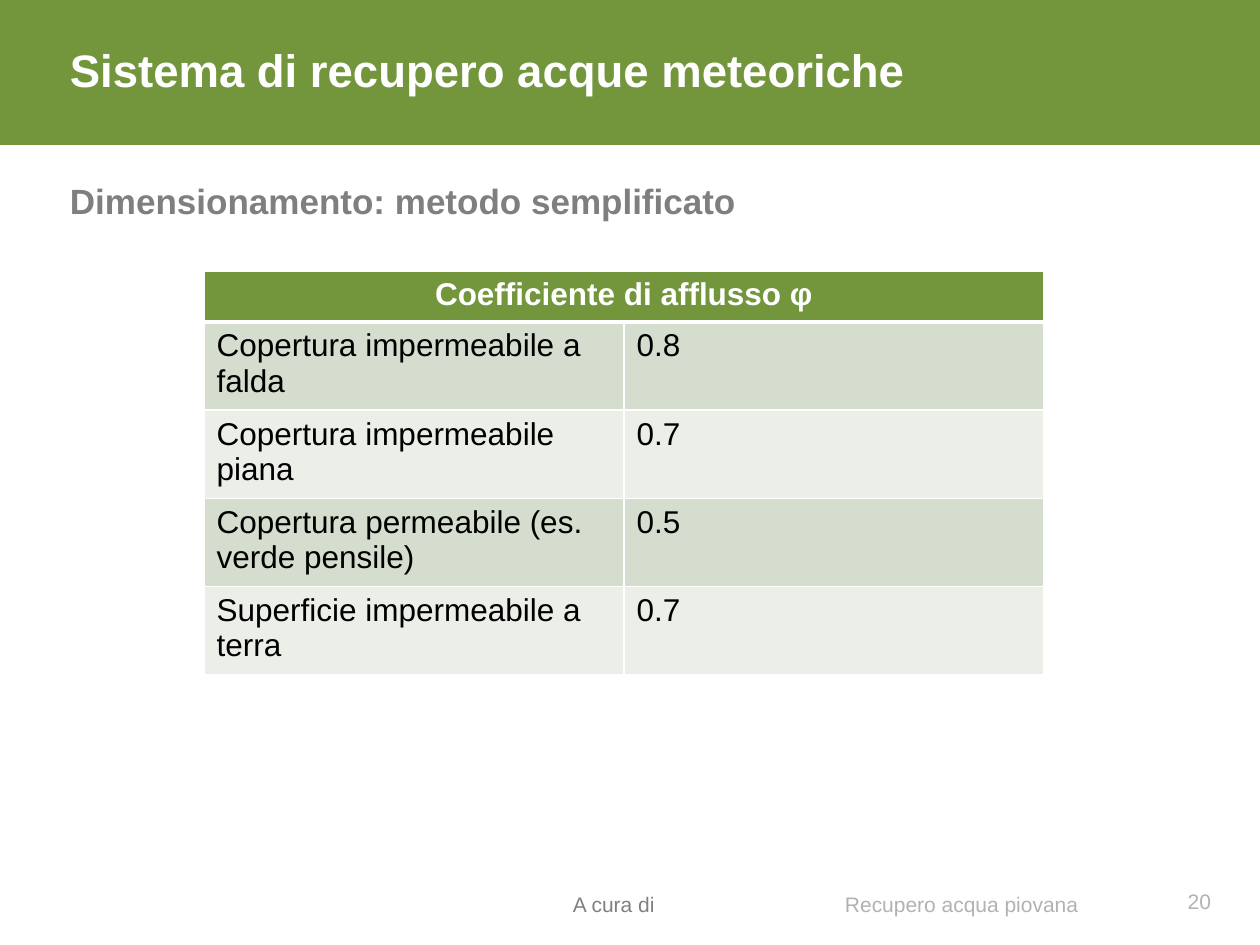
from pptx import Presentation
from pptx.dml.color import RGBColor as RGB
from pptx.enum.shapes import MSO_SHAPE as SHAPE
from pptx.enum.text import MSO_ANCHOR as ANCHOR, PP_ALIGN as ALIGN
from pptx.oxml.ns import qn
from pptx.util import Emu, Pt
from lxml.etree import SubElement

GREEN = RGB(0x73, 0x96, 0x3D)
DARK = RGB(0xD5, 0xDD, 0xCE)
PALE = RGB(0xEB, 0xEF, 0xE8)
WHITE = RGB(255, 255, 255)
BLACK = RGB(0, 0, 0)
GRAY = RGB(0x80, 0x80, 0x80)
MID = RGB(0x7F, 0x7F, 0x7F)
LIGHT = RGB(0xB2, 0xB2, 0xB2)

HEAD = "Coefficiente di afflusso φ"
ROWS = [
    ("Copertura impermeabile a falda", "0.8"),
    ("Copertura impermeabile piana", "0.7"),
    ("Copertura permeabile (es. verde pensile)", "0.5"),
    ("Superficie impermeabile a terra", "0.7"),
]


def px(n):
    return Emu(round(n * 914400 / 126))


def write(frame, text, size, color, bold=False, align=ALIGN.LEFT):
    para = frame.paragraphs[0]
    para.text = text
    para.alignment = align
    font = para.font
    font.name, font.size, font.bold = "Arial", Pt(size), bold
    font.color.rgb = color


def add_text(slide, box, text, size, color, bold=False, align=ALIGN.LEFT,
             anchor=ANCHOR.MIDDLE, pad=(13, 6, 13, 6)):
    frame = slide.shapes.add_textbox(*map(px, box)).text_frame
    frame.word_wrap = True
    frame.vertical_anchor = anchor
    (frame.margin_left, frame.margin_top,
     frame.margin_right, frame.margin_bottom) = map(px, pad)
    write(frame, text, size, color, bold, align)


def add_band(slide, box, color):
    band = slide.shapes.add_shape(SHAPE.RECTANGLE, *map(px, box))
    band.shadow.inherit = False
    band.fill.solid()
    band.fill.fore_color.rgb = color
    band.line.fill.background()


def set_cell(cell, fill, top=1, bottom=1):
    # Borders must come before the fill
    props = cell._tc.get_or_add_tcPr()
    for side, width in (("L", 1), ("R", 1), ("T", top), ("B", bottom)):
        line = SubElement(props, qn("a:ln" + side), w=str(Pt(width)))
        paint = SubElement(line, qn("a:solidFill"))
        SubElement(paint, qn("a:srgbClr"), val=str(WHITE))
    cell.fill.solid()
    cell.fill.fore_color.rgb = fill


def add_grid(slide, left, top, width, head, high):
    total = head + high * len(ROWS)
    grid = slide.shapes.add_table(
        len(ROWS) + 1, 2, *map(px, (left, top, width, total))).table
    # Header across both columns
    grid.rows[0].height = px(head)
    for cell in grid.rows[0].cells:
        set_cell(cell, GREEN, bottom=3)
    grid.cell(0, 0).merge(grid.cell(0, 1))
    write(grid.cell(0, 0).text_frame, HEAD, 18, WHITE, True, ALIGN.CENTER)
    # Coefficients in alternating bands
    for i, texts in enumerate(ROWS, 1):
        grid.rows[i].height = px(high)
        for cell, text in zip(grid.rows[i].cells, texts):
            set_cell(cell, DARK if i % 2 else PALE, top=3 if i == 1 else 1)
            write(cell.text_frame, text, 18, BLACK)


def main():
    deck = Presentation()
    deck.slide_width, deck.slide_height = px(1260), px(945)
    slide = deck.slides.add_slide(deck.slide_layouts[6])

    # Title and subtitle
    add_band(slide, (0, 0, 1260, 145), GREEN)
    add_text(slide, (57, 42, 1134, 55), "Sistema di recupero acque meteoriche",
             26, WHITE, True, pad=(13, 0, 13, 0))
    add_text(slide, (57, 173, 1134, 55), "Dimensionamento: metodo semplificato",
             20, MID, True, anchor=ANCHOR.TOP)

    # Table
    add_grid(slide, 204, 271, 840, 51, 83)

    # Footer
    foot = (0, 6, 13, 0)
    add_text(slide, (573, 876, 277, 50), "A cura di", 12, GRAY, pad=foot)
    add_text(slide, (845, 876, 306, 50), "Recupero acqua piovana", 12, LIGHT,
             pad=foot)
    add_text(slide, (1152, 876, 72, 50), "20", 12, LIGHT, align=ALIGN.RIGHT)

    deck.save("out.pptx")


if __name__ == "__main__":
    main()
